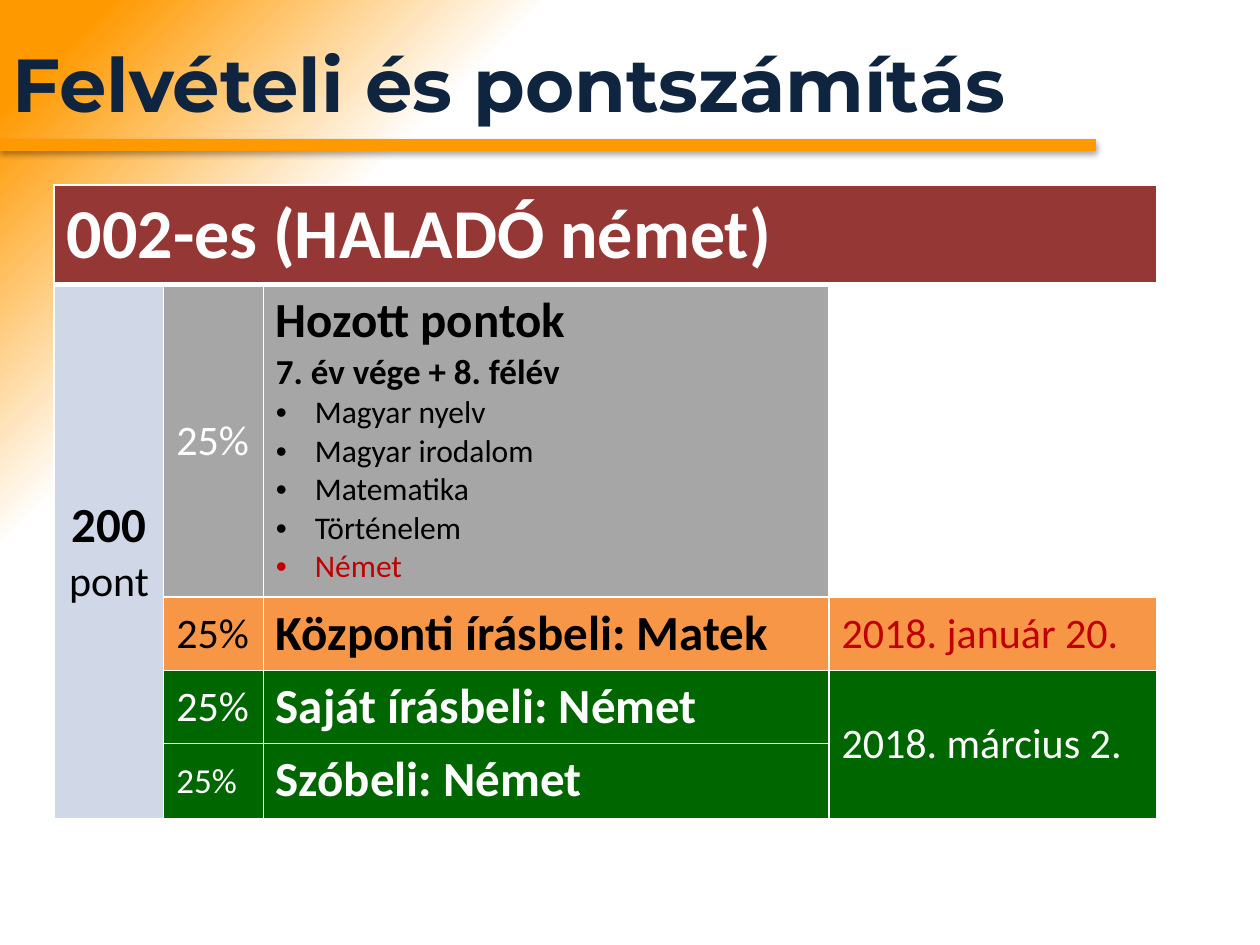
from dataclasses import dataclass
from pptx import Presentation
from pptx.dml.color import RGBColor
from pptx.enum.shapes import MSO_CONNECTOR
from pptx.enum.text import MSO_ANCHOR, MSO_AUTO_SIZE, PP_ALIGN
from pptx.oxml import parse_xml
from pptx.oxml.ns import nsdecls, qn
from pptx.util import Inches, Pt


@dataclass(frozen=True)
class Theme:
    title_font: str = "Montserrat"
    body_font: str = "Calibri"
    navy: str = "0F243E"
    orange: str = "FF9900"
    white: str = "FFFFFF"
    black: str = "000000"
    red: str = "C00000"
    maroon: str = "953735"
    pale_blue: str = "D0D8E8"
    grey: str = "A6A6A6"
    amber: str = "F79646"
    green: str = "006600"
    title: float = 42.9
    header: int = 40
    large: int = 28
    medium: int = 24
    small: int = 20
    item: int = 18


class SlideBuilder:
    """Places elements on a grid of 100 columns by 75 rows."""

    def __init__(self, deck, theme):
        self.theme = theme
        self.column, self.row = deck.slide_width / 100, deck.slide_height / 75
        self.slide = deck.slides.add_slide(deck.slide_layouts[5])

    def x(self, columns):
        return round(columns * self.column)

    def y(self, rows):
        return round(rows * self.row)

    def add_run(self, paragraph, text, size, color, bold=False, font=None):
        run = paragraph.add_run()
        run.text = text
        run.font.name = font or self.theme.body_font
        run.font.size = Pt(size)
        run.font.bold = bold
        run.font.color.rgb = RGBColor.from_string(color)

    def background(self, stops):
        fill = self.slide.background.fill
        fill.gradient()
        gradient = self.slide.element.find(".//" + qn("a:gradFill"))
        stop_xml = "".join(
            f'<a:gs pos="{pos * 1000}"><a:srgbClr val="{color}">'
            f'<a:alpha val="{opacity * 1000}"/></a:srgbClr></a:gs>'
            for pos, color, opacity in stops)
        gradient.getparent().replace(gradient, parse_xml(
            f'<a:gradFill {nsdecls("a")} rotWithShape="1"><a:gsLst>{stop_xml}</a:gsLst>'
            '<a:path path="circle"><a:fillToRect l="100000" t="100000"/></a:path>'
            '</a:gradFill>'))

    def title(self, text, left, top, width, height):
        heading = self.slide.shapes.title
        heading.left, heading.top = self.x(left), self.y(top)
        heading.width, heading.height = self.x(width), self.y(height)
        frame = heading.text_frame
        frame.auto_size = MSO_AUTO_SIZE.NONE
        frame.vertical_anchor = MSO_ANCHOR.MIDDLE
        frame.paragraphs[0].alignment = PP_ALIGN.LEFT
        self.add_run(frame.paragraphs[0], text, self.theme.title, self.theme.navy,
                     True, self.theme.title_font)

    def rule(self, left, right, at, weight):
        line = self.slide.shapes.add_connector(
            MSO_CONNECTOR.STRAIGHT, self.x(left), self.y(at), self.x(right), self.y(at))
        line.line.color.rgb = RGBColor.from_string(self.theme.orange)
        line.line.width = Pt(weight)
        line.element.spPr.append(parse_xml(
            f'<a:effectLst {nsdecls("a")}><a:outerShdw blurRad="{Pt(3.1)}" '
            f'dist="{Pt(1.8)}" dir="5400000" rotWithShape="0"><a:srgbClr val="000000">'
            '<a:alpha val="35000"/></a:srgbClr></a:outerShdw></a:effectLst>'))

    def table(self, left, top, widths, heights):
        frame = self.slide.shapes.add_table(
            len(heights), len(widths), self.x(left), self.y(top),
            self.x(sum(widths)), self.y(sum(heights)))
        table = frame.table
        table.first_row = table.horz_banding = False
        for column, width in zip(table.columns, widths):
            column.width = self.x(width)
        for row, height in zip(table.rows, heights):
            row.height = self.y(height)
        for r in range(len(heights)):
            for c in range(len(widths)):
                cell = table.cell(r, c)
                self.borders(cell, T=3 if r == 1 else 1, B=3 if r == 0 else 1)
                cell.fill.background()
        return table

    def borders(self, cell, **weights):
        properties = cell._tc.get_or_add_tcPr()
        for side in "LRTB":
            properties.append(parse_xml(
                f'<a:ln{side} {nsdecls("a")} w="{Pt(weights.get(side, 1))}"><a:solidFill>'
                f'<a:srgbClr val="{self.theme.white}"/></a:solidFill></a:ln{side}>'))

    def cell(self, cell, fill, *paragraphs, middle=False, align=None):
        """Each paragraph is a list of (text, size, color, bold) runs."""
        cell.fill.solid()
        cell.fill.fore_color.rgb = RGBColor.from_string(fill)
        cell.vertical_anchor = MSO_ANCHOR.MIDDLE if middle else MSO_ANCHOR.TOP
        for i, runs in enumerate(paragraphs):
            frame = cell.text_frame
            paragraph = frame.paragraphs[0] if i == 0 else frame.add_paragraph()
            paragraph.alignment = align
            for run in runs:
                self.add_run(paragraph, *run)

    def bullets(self, paragraphs, indent):
        for paragraph in paragraphs:
            properties = paragraph._p.get_or_add_pPr()
            properties.set("marL", str(Inches(indent)))
            properties.set("indent", str(-Inches(indent)))
            properties.append(parse_xml(f'<a:buFont {nsdecls("a")} typeface="Arial"/>'))
            properties.append(parse_xml(f'<a:buChar {nsdecls("a")} char="•"/>'))


def main():
    deck = Presentation()
    deck.slide_width, deck.slide_height = Inches(10), Inches(7.5)
    theme = Theme()
    page = SlideBuilder(deck, theme)

    # Background, title and underline
    page.background([(75, theme.white, 100), (95, theme.orange, 67), (100, theme.orange, 100)])
    page.title("Felvételi és pontszámítás", 0, 0, 100, 13.1)
    page.rule(0, 87, 11.5, 7)

    # Scoring table with its merged areas
    scoring = page.table(4.3, 14.7, [8.7, 7.9, 44.9, 26], [7.9, 24.8, 5.8, 5.8, 6])
    for first, last in [((0, 0), (0, 3)), ((1, 0), (4, 0)), ((3, 3), (4, 3))]:
        scoring.cell(*first).merge(scoring.cell(*last))

    # Header and total
    page.cell(scoring.cell(0, 0), theme.maroon,
              [("002-es (HALADÓ német)", theme.header, theme.white, True)])
    page.cell(scoring.cell(1, 0), theme.pale_blue,
              [("200", theme.large, theme.black, True), (" pont", theme.medium, theme.black)],
              middle=True, align=PP_ALIGN.CENTER)

    # Share of each part
    shares = [(theme.grey, theme.white, theme.medium), (theme.amber, theme.black, theme.medium),
              (theme.green, theme.white, theme.medium), (theme.green, theme.white, theme.small)]
    for row, (fill, color, size) in enumerate(shares, start=1):
        page.cell(scoring.cell(row, 1), fill, [("25%", size, color)], middle=True)

    # Points brought from school
    subjects = ["Magyar nyelv", "Magyar irodalom", "Matematika", "Történelem"]
    school = scoring.cell(1, 2)
    page.cell(school, theme.grey,
              [("Hozott pontok", theme.large, theme.black, True)],
              [("7. év vége + 8. félév", theme.small, theme.black, True)],
              *[[(subject, theme.item, theme.black)] for subject in subjects],
              [("Német", theme.item, theme.red)])
    page.bullets(school.text_frame.paragraphs[2:], 0.31)

    # Exams and their dates
    exams = [("Központi írásbeli: Matek", theme.amber, theme.black),
             ("Saját írásbeli: Német", theme.green, theme.white),
             ("Szóbeli: Német", theme.green, theme.white)]
    for row, (exam, fill, color) in enumerate(exams, start=2):
        page.cell(scoring.cell(row, 2), fill, [(exam, theme.large, color, True)])
    dates = [("2018. január 20.", theme.amber, theme.red),
             ("2018. március 2.", theme.green, theme.white)]
    for row, (date, fill, color) in enumerate(dates, start=2):
        page.cell(scoring.cell(row, 3), fill, [(date, theme.medium, color)], middle=True)

    deck.save("out.pptx")


if __name__ == "__main__":
    main()
